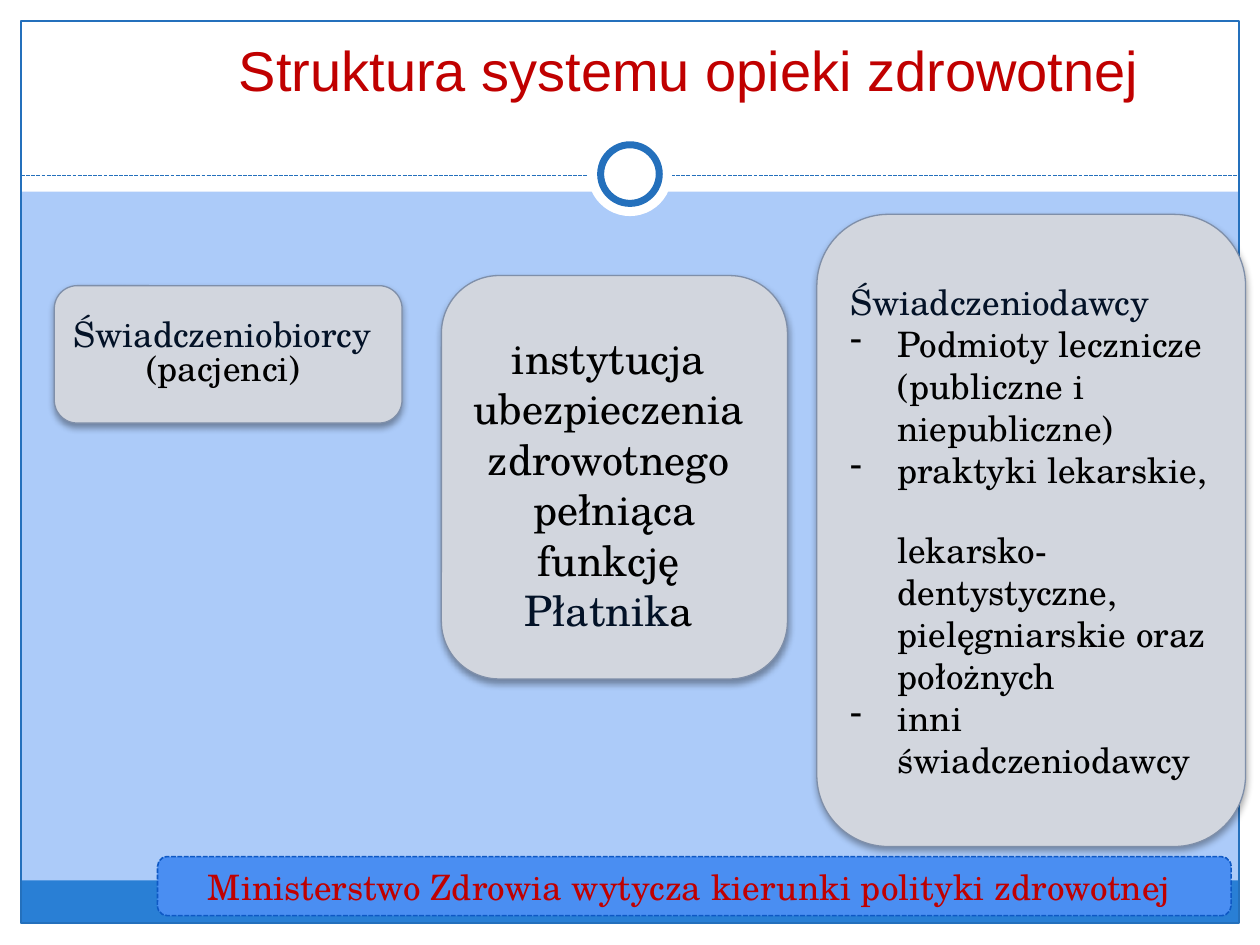
from lxml import etree
from pptx import Presentation
from pptx.dml.color import RGBColor
from pptx.enum.dml import MSO_LINE
from pptx.enum.shapes import MSO_CONNECTOR, MSO_SHAPE
from pptx.enum.text import MSO_ANCHOR, PP_ALIGN
from pptx.oxml import parse_xml
from pptx.oxml.ns import nsdecls, qn
from pptx.util import Pt

RECT, ROUND, OVAL = MSO_SHAPE.RECTANGLE, MSO_SHAPE.ROUNDED_RECTANGLE, MSO_SHAPE.OVAL
LEFT, CENTER = PP_ALIGN.LEFT, PP_ALIGN.CENTER
MIDDLE = MSO_ANCHOR.MIDDLE
DASH = MSO_LINE.SQUARE_DOT
STRAIGHT = MSO_CONNECTOR.STRAIGHT

SERIF = "TeX Gyre Schola"
WHITE, BLACK, NAVY, RED, BLUE = "FFFFFF", "000000", "031227", "C00000", "2470BC"
SHADOW = (
    f'<a:effectLst {nsdecls("a")}><a:outerShdw blurRad="{Pt(4)}" dist="{Pt(2)}" '
    'dir="5400000" rotWithShape="0"><a:srgbClr val="000000">'
    '<a:alpha val="35000"/></a:srgbClr></a:outerShdw></a:effectLst>'
)

deck = Presentation()
deck.slide_width, deck.slide_height = Pt(720), Pt(540)
slide = deck.slides.add_slide(deck.slide_layouts[6])
color = RGBColor.from_string
ground = slide.background.fill
ground.solid()
ground.fore_color.rgb = color("ACCBF9")


def add_box(kind, x, y, w, h, fill=None, line=None, width=0.75):
    box = slide.shapes.add_shape(kind, Pt(x), Pt(y), Pt(w), Pt(h))
    box.shadow.inherit = False
    if fill:
        box.fill.solid()
        box.fill.fore_color.rgb = color(fill)
    else:
        box.fill.background()
    if line:
        box.line.color.rgb = color(line)
        box.line.width = Pt(width)
    else:
        box.line.fill.background()
    return box


def write(frame, lines, size, align, font=SERIF):
    """Fill the frame; each line is a list of (text, colour) parts."""
    frame.word_wrap = True
    for i, parts in enumerate(lines):
        para = frame.paragraphs[0] if i == 0 else frame.add_paragraph()
        para.alignment = align
        if len(parts) == 1:
            para.text = parts[0][0]
        else:
            for text, _ in parts:
                para.add_run().text = text
        for j, run in enumerate(para.runs):
            run.font.size = Pt(size)
            run.font.name = font
            run.font.color.rgb = color(parts[min(j, len(parts) - 1)][1])


# White margins, footer band and frame
for area in [(0, 528, 720, 12), (0, 0, 720, 109.5), (0, 0, 12, 540), (708, 0, 12, 540)]:
    add_box(RECT, *area, fill=WHITE)
add_box(RECT, 11.75, 503, 696, 24.75, fill="297FD5")
add_box(RECT, 12, 12, 696, 515.5, line=BLUE)

# Dashed rule with a ring in the middle
rule = slide.shapes.add_connector(STRAIGHT, Pt(12), Pt(100.5), Pt(708), Pt(100.5))
rule.line.color.rgb = color(BLUE)
rule.line.width = Pt(0.75)
rule.line.dash_style = DASH
etree.SubElement(rule._element.spPr, qn("a:effectLst"))
add_box(OVAL, 336, 75.5, 48, 48, fill=WHITE)
add_box(OVAL, 343.25, 82.75, 33.5, 33.5, fill=WHITE, line=BLUE, width=4)

title = slide.shapes.add_textbox(Pt(129.5), Pt(16.5), Pt(546), Pt(46))
write(title.text_frame, [[("Struktura systemu opieki zdrowotnej", RED)]], 32, LEFT, "Arial")

# Three parties of the system
patients = [[("Świadczeniobiorcy", NAVY)], [("(pacjenci) ", BLACK)]]
words = ["instytucja ", "ubezpieczenia ", "zdrowotnego ", "pełniąca", "funkcję "]
payer = [[(word, BLACK)] for word in words] + [[("Płatnik", NAVY), ("a ", BLACK)]]
items = [
    "Podmioty lecznicze (publiczne i niepubliczne)",
    "praktyki lekarskie, \nlekarsko-dentystyczne, pielęgniarskie oraz położnych",
    "inni świadczeniodawcy",
]
givers = [[("Świadczeniodawcy", NAVY)]] + [[(item, BLACK)] for item in items]

cards = []
for area, lines, size, align in [
    ((31, 163.25, 198.75, 78.5), patients, 20, LEFT),
    ((252.25, 157.5, 197.75, 230.5), payer, 24, CENTER),
    ((466.75, 122.5, 245, 361.25), givers, 20, LEFT),
]:
    card = add_box(ROUND, *area, fill="D2D6DE", line="7F8FA9")
    props = card._element.spPr
    props.replace(props.find(qn("a:effectLst")), parse_xml(SHADOW))
    card.text_frame.vertical_anchor = MIDDLE
    write(card.text_frame, lines, size, align)
    cards.append(card.text_frame)

for para in cards[0].paragraphs:
    para.line_spacing = 0.8
cards[0].paragraphs[1].alignment = CENTER
cards[1].margin_top = Pt(11)
for i, para in enumerate(cards[2].paragraphs):
    props = para._p.get_or_add_pPr()
    props.set("marL", str(Pt(27)))
    props.set("indent", str(Pt(-27)))
    if i:
        etree.SubElement(props, qn("a:buFontTx"))
        etree.SubElement(props, qn("a:buChar"), char="-")

# Ministry bar
bar = add_box(ROUND, 90, 489.5, 613.5, 33.75, fill="4A8EF2", line="0E58C4", width=0.9)
bar.line.dash_style = DASH
bar.text_frame.vertical_anchor = MIDDLE
motto = "Ministerstwo Zdrowia wytycza kierunki polityki zdrowotnej "
write(bar.text_frame, [[(motto, RED)]], 20, CENTER)

deck.save("out.pptx")
